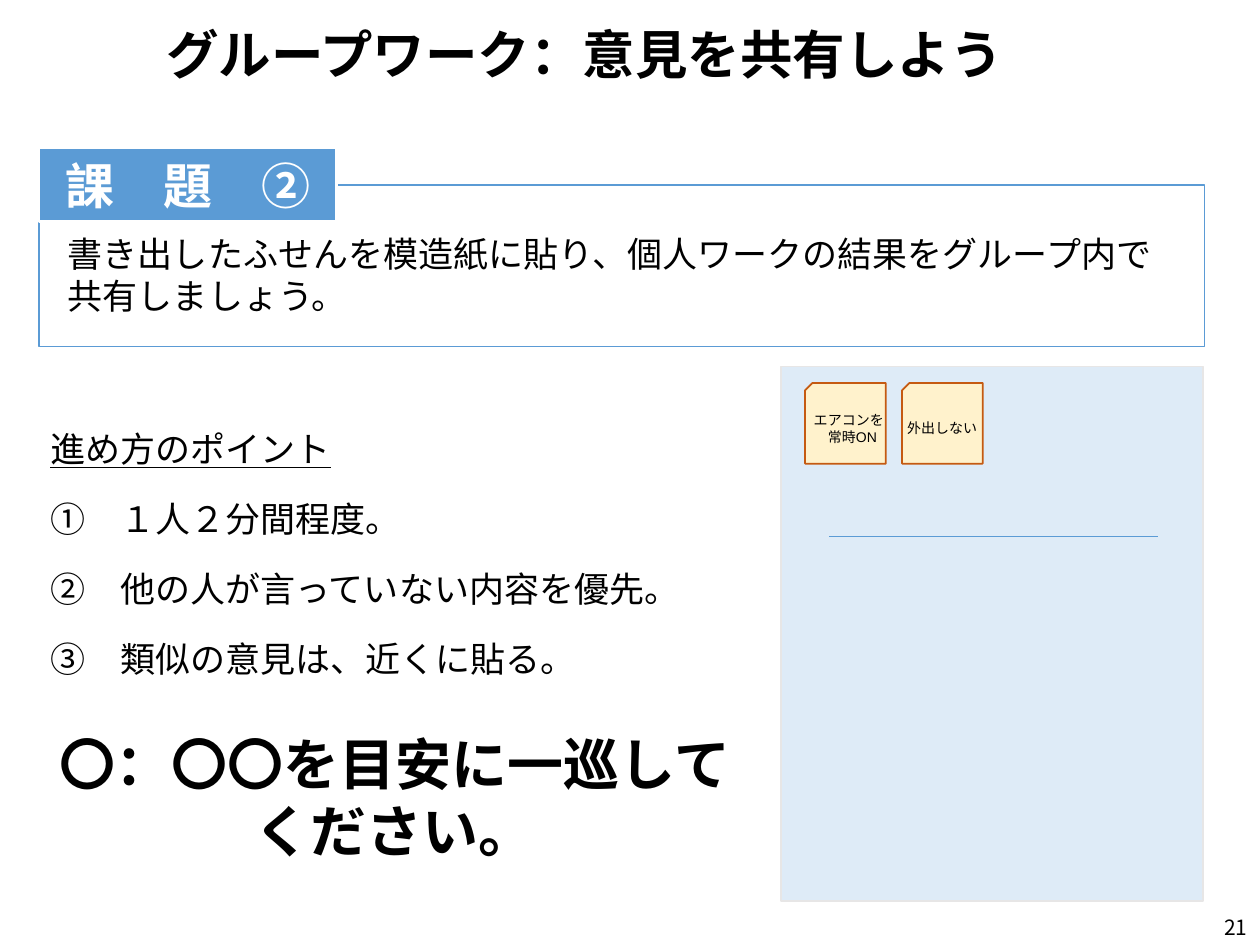
"""Build the group-work slide: task banner, procedure points and a sticky-note board."""
from lxml.etree import SubElement
from pptx import Presentation
from pptx.dml.color import RGBColor
from pptx.enum.shapes import MSO_CONNECTOR, MSO_SHAPE
from pptx.enum.text import MSO_ANCHOR, MSO_AUTO_SIZE, PP_ALIGN
from pptx.oxml.ns import qn
from pptx.util import Inches, Pt

COLORS = {"blue": "5B9BD5", "white": "FFFFFF", "black": "000000", "board": "DEEBF7",
          "gray": "E7E6E6", "note": "FFF2CC", "orange": "C55A11"}
CJK_FONT = "Noto Sans CJK JP"
WIDTH, HEIGHT = 10, 7.5
LEFT = 0.31
NOTE_LEFT, NOTE_TOP, NOTE_SIZE, NOTE_STEP = 6.39, 3.04, 0.64, 0.77

TITLE = "グループワーク：意見を共有しよう"
TASK_LABEL = "課　題　②"
TASK = "書き出したふせんを模造紙に貼り、個人ワークの結果をグループ内で共有しましょう。"
POINTS_HEADING = "進め方のポイント"
POINTS = ["①　１人２分間程度。", "②　他の人が言っていない内容を優先。", "③　類似の意見は、近くに貼る。"]
TIMING = "〇：〇〇を目安に一巡してください。"
NOTES = [("エアコンを\n　常時ON", (6.36, 3.22, 0.79, 0.37)),
         ("外出しない", (7.1, 3.28, 0.78, 0.24))]
PAGE_NUMBER = "21"


def color(name):
    return RGBColor.from_string(COLORS[name])


def write(shape, lines, size, font="Arial", ink="black", bold=False,
          align=PP_ALIGN.LEFT, spacing=None, anchor=MSO_ANCHOR.TOP):
    frame = shape.text_frame
    frame.word_wrap = True
    frame.vertical_anchor = anchor
    for index, line in enumerate(lines):
        para = frame.add_paragraph() if index else frame.paragraphs[0]
        para.text = line
        para.alignment = align
        para.line_spacing = spacing
        para.font.size = Pt(size)
        para.font.bold = bold
        para.font.color.rgb = color(ink)
        para.font.name = font
        defaults = para._p.pPr.find(qn("a:defRPr"))
        SubElement(defaults, qn("a:ea")).set("typeface", CJK_FONT)
    return frame


def add_text(shapes, area, lines, size, grow=True, **style):
    box = shapes.add_textbox(*map(Inches, area))
    frame = write(box, lines, size, **style)
    frame.auto_size = MSO_AUTO_SIZE.SHAPE_TO_FIT_TEXT if grow else MSO_AUTO_SIZE.NONE
    return frame


def add_panel(shapes, area, fill, line, width=1, kind=MSO_SHAPE.RECTANGLE):
    panel = shapes.add_shape(kind, *map(Inches, area))
    panel.shadow.inherit = False
    if fill:
        panel.fill.solid()
        panel.fill.fore_color.rgb = color(fill)
    else:
        panel.fill.background()
    panel.line.color.rgb = color(line)
    panel.line.width = Pt(width)
    return panel


def add_notes(shapes):
    group = shapes.add_group_shape().shapes
    for column in range(len(NOTES)):
        area = (NOTE_LEFT + column * NOTE_STEP, NOTE_TOP, NOTE_SIZE, NOTE_SIZE)
        note = add_panel(group, area, "note", "orange", kind=MSO_SHAPE.SNIP_1_RECTANGLE)
        note.adjustments[0] = 0.09
        note._element.spPr.find(qn("a:xfrm")).set("flipH", "1")
    for text, area in NOTES:
        add_text(group, area, [text], 8)


def main():
    deck = Presentation()
    deck.slide_width, deck.slide_height = Inches(WIDTH), Inches(HEIGHT)
    page = deck.slides.add_slide(deck.slide_layouts[6])
    shapes = page.shapes

    add_text(shapes, (1.22, -0.03, 8.78, 0.76), [TITLE], 30, grow=False, font=CJK_FONT,
             bold=True, spacing=0.9, anchor=MSO_ANCHOR.BOTTOM)
    add_panel(shapes, (LEFT, 1.47, 9.25, 1.28), None, "blue")
    label = add_panel(shapes, (LEFT, 1.17, 2.36, 0.59), "blue", "white", 1.5)
    write(label, [TASK_LABEL], 28, ink="white", bold=True,
          align=PP_ALIGN.CENTER, anchor=MSO_ANCHOR.MIDDLE)
    add_text(shapes, (0.44, 1.8, 8.92, 0.77), [TASK], 20)
    add_panel(shapes, (6.2, 2.91, 3.35, 4.24), "board", "gray")
    add_text(shapes, (LEFT, 5.74, 5.64, 1.18), [TIMING], 32, bold=True, align=PP_ALIGN.CENTER)
    points = add_text(shapes, (0.3, 3.12, 5.81, 2.34), [POINTS_HEADING, *POINTS], 20,
                      spacing=Pt(40))
    points.paragraphs[0].runs[0].font.underline = True

    divider = shapes.add_connector(MSO_CONNECTOR.STRAIGHT,
                                   *map(Inches, (6.58, 4.26, 9.19, 4.26)))
    divider.line.color.rgb = color("blue")
    divider.line.width = Pt(0.5)
    SubElement(divider._element.spPr, qn("a:effectLst"))

    add_notes(shapes)
    add_text(shapes, (WIDTH - 0.9, HEIGHT - 0.27, 0.9, 0.27), [PAGE_NUMBER], 12, grow=False,
             font=CJK_FONT, align=PP_ALIGN.RIGHT, spacing=Pt(13)).margin_right = Inches(0.1)
    deck.save("out.pptx")


if __name__ == "__main__":
    main()
